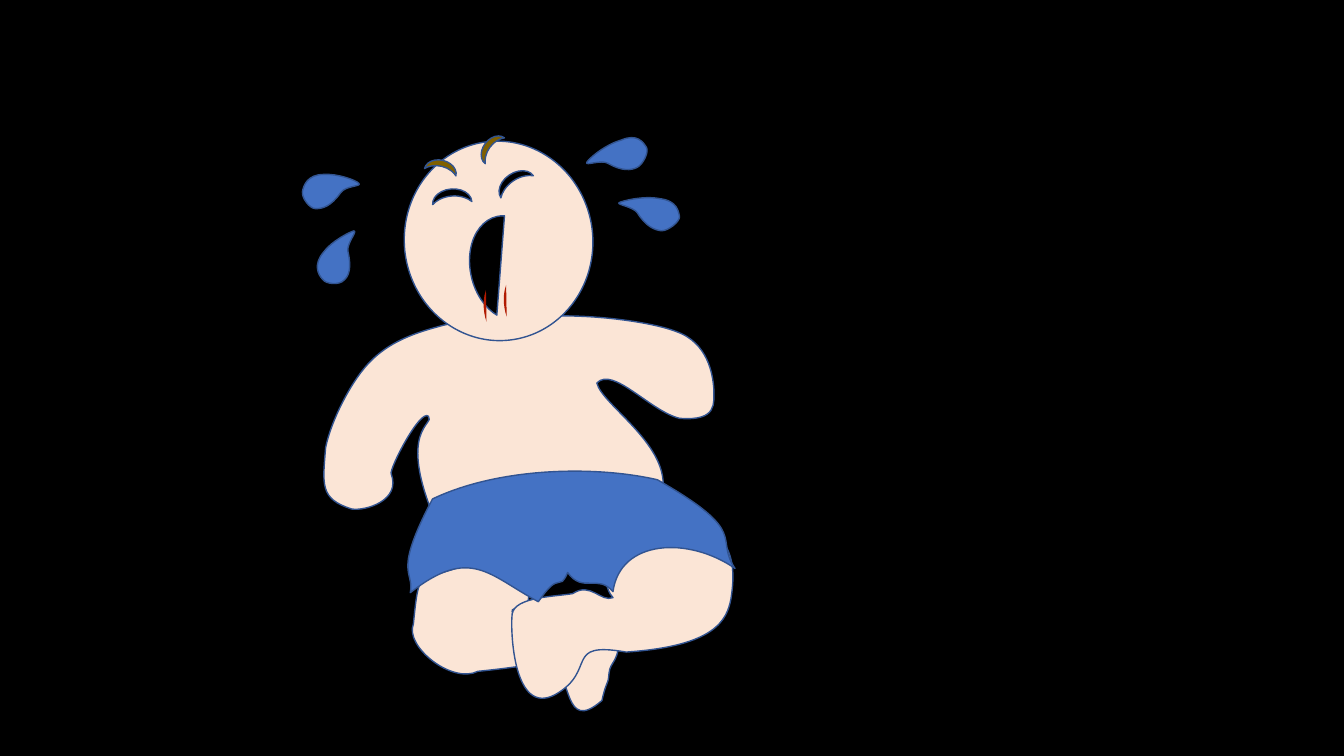
from dataclasses import dataclass
from math import cos, radians, sin

from lxml.etree import SubElement
from pptx import Presentation
from pptx.dml.color import RGBColor
from pptx.enum.shapes import MSO_SHAPE
from pptx.oxml.ns import qn
from pptx.shapes.autoshape import Shape
from pptx.slide import Slide
from pptx.util import Pt

PX = 9144  # 100 px to the inch
SKIN, BLUE, OUTLINE = "FBE5D6", "4472C4", "325491"
BLACK, BROWN, RED = "000000", "806000", "B11A01"

Box = tuple[int, int, int, int]
Point = tuple[int, int]
Curve = tuple[int, int, int, int, int, int]


@dataclass(frozen=True)
class Preset:
    kind: MSO_SHAPE
    box: Box
    turn: float
    fill: str
    angles: tuple[float, ...] = ()
    outlined: bool = True


@dataclass(frozen=True)
class Freehand:
    """A closed curve in slide px, held in a box that is turned about its centre."""
    box: Box
    turn: float
    fill: str
    start: Point
    curves: tuple[Curve, ...]


TORSO = Freehand((316, 315, 394, 194), 353.9, SKIN, (425, 413), (
    (417, 405, 386, 465, 388, 470), (398, 497, 362, 507, 349, 505),
    (317, 495, 320, 481, 323, 444), (328, 419, 347, 380, 366, 360),
    (385, 340, 409, 331, 435, 324), (461, 316, 478, 323, 521, 316),
    (563, 309, 640, 317, 671, 329), (702, 340, 707, 371, 708, 386),
    (708, 400, 712, 418, 674, 415), (645, 408, 608, 363, 592, 380),
    (597, 402, 666, 442, 657, 489), (646, 492, 456, 446, 432, 517),
    (393, 425, 432, 421, 425, 413)))
LEFT_LEG = Freehand((426, 531, 178, 199), 326.6, SKIN, (547, 662), (
    (527, 657, 525, 661, 474, 666), (448, 679, 401, 641, 410, 619),
    (417, 548, 416, 588, 483, 549), (528, 535, 534, 609, 513, 608),
    (492, 607, 536, 592, 554, 605), (571, 608, 612, 592, 614, 626),
    (615, 659, 605, 655, 604, 668), (603, 681, 602, 673, 597, 695),
    (558, 729, 568, 667, 547, 662)))
RIGHT_LEG = Freehand((528, 489, 174, 236), 35.5, SKIN, (551, 689), (
    (593, 665, 558, 636, 621, 647), (710, 641, 721, 615, 725, 594),
    (728, 573, 739, 506, 641, 518), (597, 503, 592, 577, 608, 593),
    (596, 598, 586, 577, 568, 589), (551, 592, 511, 592, 508, 609),
    (506, 625, 509, 712, 551, 689)))
SHORTS = Freehand((410, 464, 322, 149), 8.6, BLUE, (407, 588), (
    (411, 565, 389, 571, 429, 495), (496, 463, 592, 462, 652, 476),
    (745, 529, 708, 533, 729, 564), (683, 532, 615, 535, 608, 587),
    (593, 569, 578, 589, 563, 568), (554, 589, 556, 564, 534, 597),
    (485, 571, 467, 541, 407, 588)))

FACE = (
    Preset(MSO_SHAPE.OVAL, (401, 140, 187, 198), 353.9, SKIN),
    Preset(MSO_SHAPE.CHORD, (452, 228, 105, 76), 77.1, BLACK, (27, 188.29)),
    Preset(MSO_SHAPE.MOON, (441, 175, 14, 39), 85.4, BLACK),
    Preset(MSO_SHAPE.MOON, (502, 160, 14, 39), 55.8, BLACK),
    Preset(MSO_SHAPE.MOON, (480, 130, 12, 32), 36.6, BROWN),
    Preset(MSO_SHAPE.MOON, (432, 149, 12, 32), 103.2, BROWN),
    *(Preset(MSO_SHAPE.CHORD, (left, top, 70, 46), 80.5, RED, (68.69, 141.87), False)
      for left, top in ((488, 279), (468, 284))),
)
BABY = (TORSO, *FACE, LEFT_LEG, RIGHT_LEG, SHORTS)

TEARS = (
    Freehand((627, 184, 34, 58), 263.7, BLUE, (656, 229), (
        (649, 228, 641, 225, 632, 211), (628, 205, 611, 203, 614, 201),
        (618, 199, 639, 194, 654, 197), (672, 199, 673, 210, 674, 215),
        (674, 220, 663, 229, 656, 229))),
    Freehand((597, 129, 34, 58), 235.9, BLUE, (632, 166), (
        (626, 169, 617, 170, 603, 162), (596, 158, 580, 165, 582, 161),
        (584, 157, 601, 143, 616, 139), (632, 132, 638, 141, 641, 146),
        (644, 150, 638, 163, 632, 166))),
    Freehand((319, 231, 38, 53), 235.9, BLUE, (341, 278), (
        (346, 274, 349, 266, 345, 249), (344, 241, 355, 229, 351, 229),
        (347, 230, 329, 239, 321, 250), (310, 263, 316, 273, 320, 277),
        (323, 282, 337, 283, 341, 278))),
    Freehand((308, 165, 38, 53), 284.8, BLUE, (313, 207), (
        (320, 207, 328, 205, 338, 191), (343, 184, 359, 185, 356, 182),
        (354, 179, 335, 172, 321, 173), (305, 173, 301, 184, 300, 190),
        (299, 196, 307, 207, 313, 207))),
)


def colour(code: str) -> RGBColor:
    return RGBColor.from_string(code)


def local_point(part: Freehand, x: int, y: int) -> tuple[int, int]:
    """Turn a slide point back into the part's own box, in EMU."""
    left, top, width, height = part.box
    across, down = x - left - width / 2, y - top - height / 2
    angle = radians(-part.turn)
    return (round((across * cos(angle) - down * sin(angle) + width / 2) * PX),
            round((across * sin(angle) + down * cos(angle) + height / 2) * PX))


def add_freehand(page: Slide, part: Freehand) -> Shape:
    """Span the box with a freeform, then give it the curved outline."""
    left, top, width, height = part.box
    builder = page.shapes.build_freeform(left, top, scale=PX)
    builder.add_line_segments([(left + width, top + height)])
    shape = builder.convert_to_shape()
    outline = shape.element.xpath(".//a:path")[0]
    for step in list(outline):
        outline.remove(step)
    outline.set("w", str(width * PX))
    outline.set("h", str(height * PX))
    commands = [("a:moveTo", part.start)]
    commands += [("a:cubicBezTo", curve) for curve in part.curves]
    for tag, numbers in commands:
        step = SubElement(outline, qn(tag))
        for x, y in zip(numbers[::2], numbers[1::2]):
            across, down = local_point(part, x, y)
            SubElement(step, qn("a:pt"), x=str(across), y=str(down))
    SubElement(outline, qn("a:close"))
    return shape


def add_preset(page: Slide, part: Preset) -> Shape:
    shape = page.shapes.add_shape(part.kind, *(length * PX for length in part.box))
    for index, angle in enumerate(part.angles):
        shape.adjustments[index] = angle * 60000 / 100000
    return shape


def draw(page: Slide, part: Preset | Freehand) -> Shape:
    is_preset = isinstance(part, Preset)
    shape = add_preset(page, part) if is_preset else add_freehand(page, part)
    shape.rotation = part.turn
    shape.shadow.inherit = False
    shape.fill.solid()
    shape.fill.fore_color.rgb = colour(part.fill)
    if is_preset and not part.outlined:
        shape.line.fill.background()
    else:
        shape.line.width = Pt(1)
        shape.line.color.rgb = colour(OUTLINE)
    return shape


def main() -> None:
    deck = Presentation()
    for name, length in {"slide_width": 1333, "slide_height": 750}.items():
        setattr(deck, name, length * PX)
    page = deck.slides.add_slide(deck.slide_layouts[6])
    page.background.fill.solid()
    page.background.fill.fore_color.rgb = colour(BLACK)
    page.shapes.add_group_shape([draw(page, part) for part in BABY])
    for tear in TEARS:
        draw(page, tear)
    deck.save("out.pptx")


if __name__ == "__main__":
    main()
